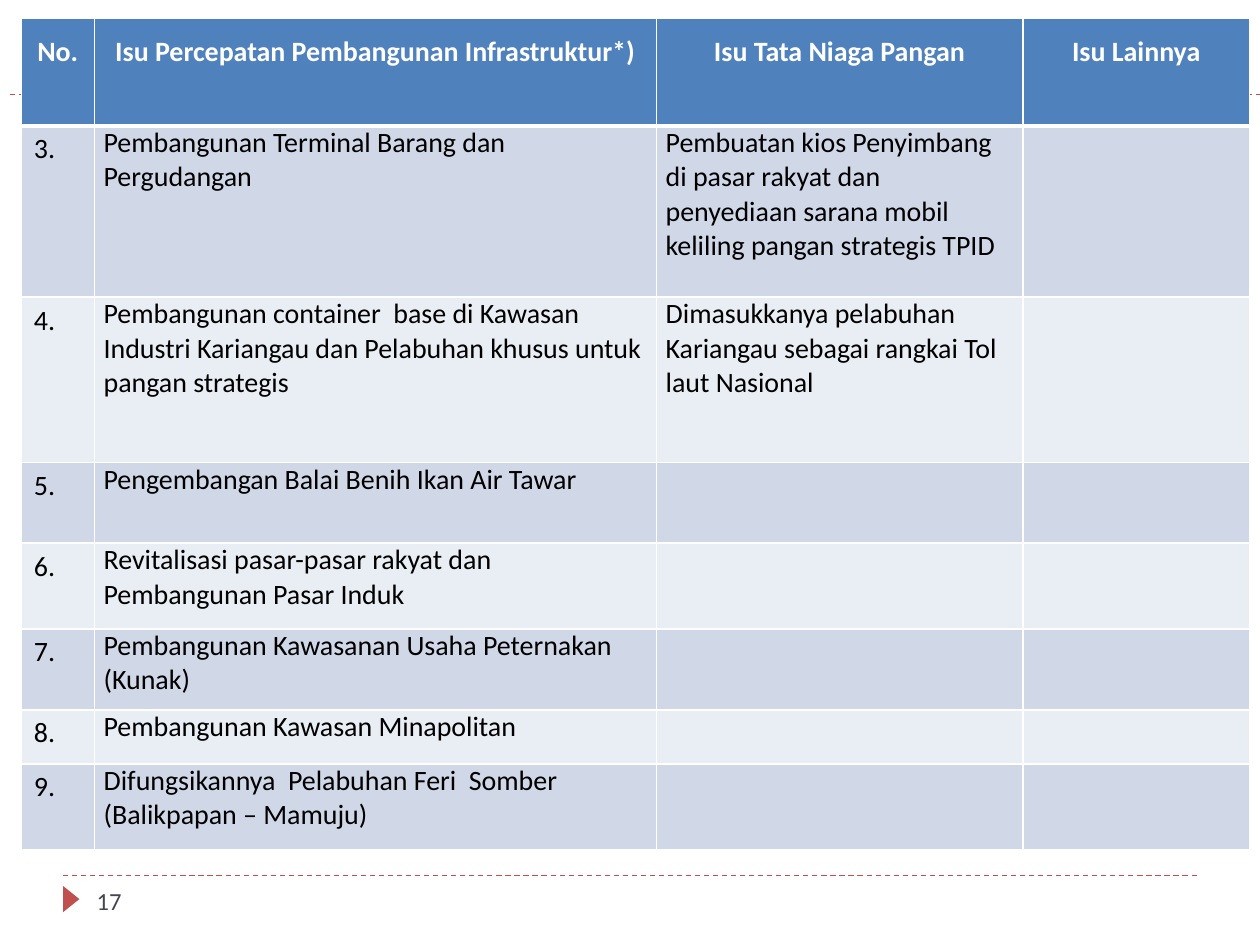
from dataclasses import dataclass

from lxml.etree import SubElement
from pptx import Presentation
from pptx.dml.color import RGBColor
from pptx.enum.dml import MSO_LINE
from pptx.enum.shapes import MSO_CONNECTOR, MSO_SHAPE
from pptx.enum.text import MSO_ANCHOR, PP_ALIGN
from pptx.oxml.ns import qn
from pptx.util import Cm, Pt


@dataclass(frozen=True)
class Theme:
    font: str = "Calibri"
    body: int = 16
    small: int = 14
    white: str = "FFFFFF"
    black: str = "000000"
    header: str = "4F81BD"
    bands: tuple = ("D0D8E8", "E9EDF4")
    accent: str = "C0504D"
    muted: str = "464653"


THEME = Theme()
COL_WIDTHS = (1.47, 11.33, 7.39, 4.57)
ROW_HEIGHTS = (2.18, 3.45, 3.33, 1.63, 1.73, 1.63, 1.09, 1.73)
HEADINGS = ("No.", "Isu Percepatan Pembangunan Infrastruktur*)",
            "Isu Tata Niaga Pangan", "Isu Lainnya")
ISSUES = (
    ("Pembangunan Terminal Barang dan Pergudangan",
     "Pembuatan kios Penyimbang di pasar rakyat dan penyediaan sarana mobil  "
     "keliling pangan strategis TPID"),
    ("Pembangunan container  base di Kawasan Industri Kariangau dan "
     "Pelabuhan khusus untuk pangan strategis",
     "Dimasukkanya pelabuhan Kariangau sebagai rangkai Tol laut Nasional"),
    ("Pengembangan Balai Benih Ikan Air Tawar", ""),
    ("Revitalisasi pasar-pasar rakyat dan Pembangunan Pasar Induk", ""),
    ("Pembangunan Kawasanan Usaha Peternakan (Kunak)", ""),
    ("Pembangunan Kawasan Minapolitan", ""),
    ("Difungsikannya  Pelabuhan Feri  Somber (Balikpapan – Mamuju)", ""),
)
FIRST_NUMBER = 3


def style_font(p, size, color, bold=False):
    p.font.name = THEME.font
    p.font.size = Pt(size)
    p.font.bold = bold
    p.font.color.rgb = RGBColor.from_string(color)


def add_dashed_line(slide, left, top, width):
    line = slide.shapes.add_connector(
        MSO_CONNECTOR.STRAIGHT, Cm(left), Cm(top), Cm(left + width), Cm(top))
    line.line.color.rgb = RGBColor.from_string(THEME.accent)
    line.line.width = Pt(0.75)
    line.line.dash_style = MSO_LINE.DASH
    SubElement(line._element.spPr, qn("a:effectLst"))


def set_borders(cell, top, bottom):
    tc_pr = cell._tc.get_or_add_tcPr()
    for side, width in (("L", 1), ("R", 1), ("T", top), ("B", bottom)):
        ln = SubElement(tc_pr, qn(f"a:ln{side}"), w=str(Pt(width)))
        fill = SubElement(ln, qn("a:solidFill"))
        SubElement(fill, qn("a:srgbClr"), val=THEME.white)


def fill_cell(cell, text, row, col):
    is_header = row == 0
    set_borders(cell, 3 if row == 1 else 1, 3 if is_header else 1)
    color = THEME.header if is_header else THEME.bands[(row - 1) % 2]
    cell.fill.solid()
    cell.fill.fore_color.rgb = RGBColor.from_string(color)
    if is_header or col > 0:
        cell.margin_left = cell.margin_right = Cm(0.19)
        cell.margin_top = cell.margin_bottom = 0
    cell.text = text
    p = cell.text_frame.paragraphs[0]
    style_font(p, THEME.body, THEME.white if is_header else THEME.black, is_header)
    if is_header:
        p.alignment = PP_ALIGN.CENTER
        p.line_spacing = 1.5
        p.space_before = p.space_after = Pt(6)


def add_issue_table(slide, left, top):
    rows = [HEADINGS]
    for number, issue in enumerate(ISSUES, FIRST_NUMBER):
        rows.append((f"{number}.", *issue, ""))
    table = slide.shapes.add_table(
        len(rows), len(HEADINGS), Cm(left), Cm(top),
        Cm(sum(COL_WIDTHS)), Cm(sum(ROW_HEIGHTS))).table
    for column, width in zip(table.columns, COL_WIDTHS):
        column.width = Cm(width)
    for r, (texts, height) in enumerate(zip(rows, ROW_HEIGHTS)):
        table.rows[r].height = Cm(height)
        for c, text in enumerate(texts):
            fill_cell(table.cell(r, c), text, r, c)


def add_footer(slide, left, top, width, number):
    add_dashed_line(slide, left, top, width)
    marker = slide.shapes.add_shape(
        MSO_SHAPE.ISOSCELES_TRIANGLE,
        Cm(left - 0.1), Cm(top + 0.31), Cm(0.53), Cm(0.33))
    marker.rotation = 90
    marker.shadow.inherit = False
    marker.fill.solid()
    marker.fill.fore_color.rgb = RGBColor.from_string(THEME.accent)
    marker.line.fill.background()
    box = slide.shapes.add_textbox(
        Cm(left + 0.43), Cm(top), Cm(5.51), Cm(1.02))
    tf = box.text_frame
    tf.word_wrap = True
    tf.vertical_anchor = MSO_ANCHOR.MIDDLE
    tf.text = number
    style_font(tf.paragraphs[0], THEME.small, THEME.muted)


def main():
    prs = Presentation()
    prs.slide_width, prs.slide_height = Cm(25.4), Cm(19.05)
    slide = prs.slides.add_slide(prs.slide_layouts[6])
    add_footer(slide, 1.27, 17.65, 22.86, "17")
    add_dashed_line(slide, 0.2, 1.9, 25.2)
    add_issue_table(slide, 0.43, 0.36)
    prs.save("out.pptx")


if __name__ == "__main__":
    main()
